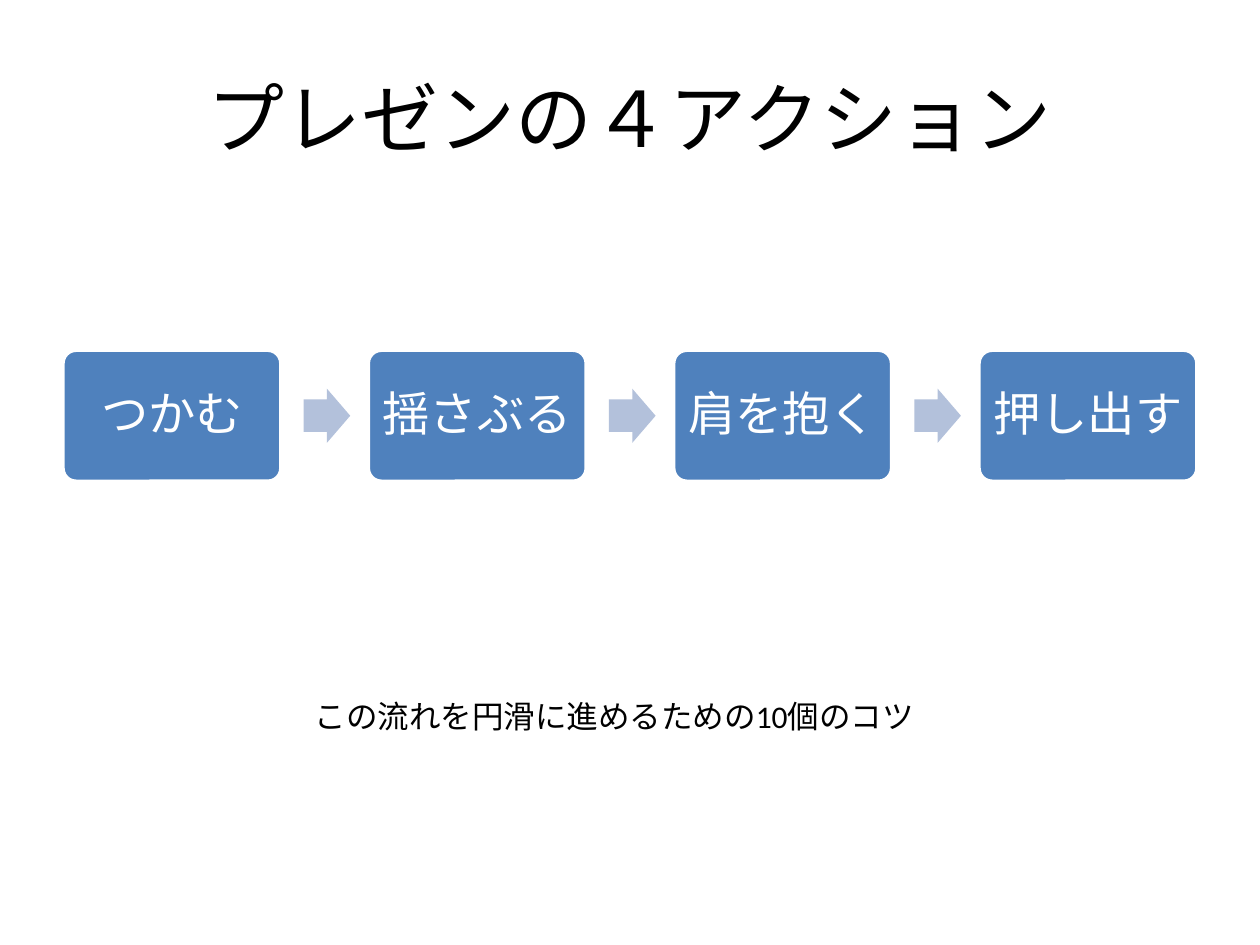
"""Build a slide showing the four actions of a presentation as a process."""
from pptx import Presentation
from pptx.dml.color import RGBColor
from pptx.enum.shapes import MSO_SHAPE
from pptx.enum.text import MSO_ANCHOR, PP_ALIGN
from pptx.util import Inches, Pt

TITLE = "プレゼンの４アクション"
ACTIONS = ["つかむ", "揺さぶる", "肩を抱く", "押し出す"]
NOTE = "この流れを円滑に進めるための10個のコツ"

FONT = "Calibri"
BLACK = RGBColor(0x00, 0x00, 0x00)
WHITE = RGBColor(0xFF, 0xFF, 0xFF)
BLUE = RGBColor(0x4F, 0x81, 0xBD)
PALE_BLUE = RGBColor(0xB3, 0xC1, 0xDB)
ROUNDED = MSO_SHAPE.ROUNDED_RECTANGLE
ARROW = MSO_SHAPE.RIGHT_ARROW
LEFT, CENTER = PP_ALIGN.LEFT, PP_ALIGN.CENTER
TOP, MIDDLE = MSO_ANCHOR.TOP, MSO_ANCHOR.MIDDLE

ROW_LEFT, ROW_RIGHT, ROW_CENTER = 0.5, 9.5, 3.3
BOX_WIDTH, BOX_HEIGHT = 1.73, 1.04
ARROW_WIDTH, ARROW_HEIGHT, ARROW_GAP = 0.37, 0.43, 0.18


def write(shape, text, size, color=BLACK, align=LEFT, anchor=TOP,
          inset=None, line_spacing=None):
    frame = shape.text_frame
    frame.word_wrap = True
    frame.vertical_anchor = anchor
    if inset is not None:
        frame.margin_left = frame.margin_right = Inches(inset)
        frame.margin_top = frame.margin_bottom = Inches(inset)
    paragraph = frame.paragraphs[0]
    paragraph.alignment = align
    paragraph.line_spacing = line_spacing
    run = paragraph.add_run()
    run.text = text
    run.font.name = FONT
    run.font.size = Pt(size)
    run.font.color.rgb = color


def add_text(slide, text, left, top, width, height, **text_format):
    box = slide.shapes.add_textbox(
        Inches(left), Inches(top), Inches(width), Inches(height))
    write(box, text, **text_format)


def add_block(slide, kind, left, width, height, fill, adjustments):
    shape = slide.shapes.add_shape(
        kind, Inches(left), Inches(ROW_CENTER - height / 2),
        Inches(width), Inches(height))
    shape.shadow.inherit = False
    shape.fill.solid()
    shape.fill.fore_color.rgb = fill
    shape.line.fill.background()
    for index, value in enumerate(adjustments):
        shape.adjustments[index] = value
    return shape


def main():
    presentation = Presentation()
    presentation.slide_width = Inches(10)
    presentation.slide_height = Inches(7.5)
    slide = presentation.slides.add_slide(presentation.slide_layouts[6])

    add_text(slide, TITLE, 0.5, 0.3, 9, 1.25,
             size=44, align=CENTER, anchor=MIDDLE)

    pitch = (ROW_RIGHT - ROW_LEFT - BOX_WIDTH) / (len(ACTIONS) - 1)
    for index, action in enumerate(ACTIONS):
        left = ROW_LEFT + index * pitch
        box = add_block(slide, ROUNDED, left, BOX_WIDTH, BOX_HEIGHT, BLUE, [0.1])
        box.line.color.rgb = WHITE
        box.line.width = Pt(2)
        write(box, action, size=27, color=WHITE, align=CENTER,
              anchor=MIDDLE, inset=0.08, line_spacing=0.9)
        if index < len(ACTIONS) - 1:
            add_block(slide, ARROW, left + BOX_WIDTH + ARROW_GAP,
                      ARROW_WIDTH, ARROW_HEIGHT, PALE_BLUE, [0.6, 0.5])

    add_text(slide, NOTE, 2.4, 5.48, 5, 0.4, size=18)
    presentation.save("out.pptx")


if __name__ == "__main__":
    main()
